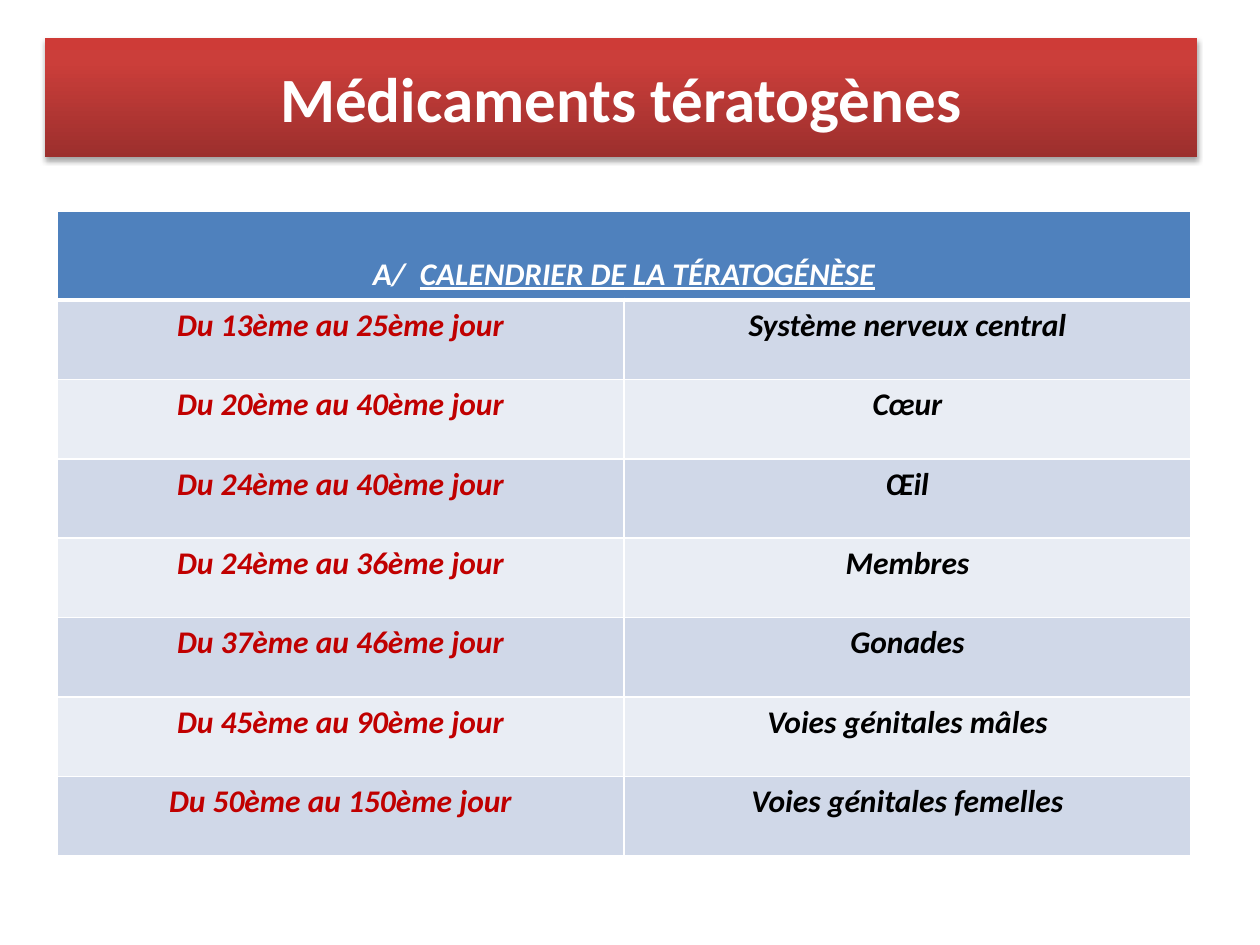
from pptx import Presentation, util as u
from pptx.dml.color import RGBColor
from pptx.enum import text
from pptx.oxml import parse_xml
from pptx.oxml.ns import nsdecls

PX = u.Inches(1) / 126
FONT = "Calibri"
WHITE, BLACK, RED, BLUE = "FFFFFF", "000000", "C00000", "4F81BD"
BANDS = ("D0D8E8", "E9EDF4")
TITLE_STOPS = ((0, "9C2F2D"), (80, "CB3E3A"), (100, "CE3B37"))
CALENDAR = [
    ("Du 13ème au 25ème jour", "Système nerveux central"),
    ("Du 20ème au 40ème jour", "Cœur"),
    ("Du 24ème au 40ème jour", "Œil"),
    ("Du 24ème au 36ème jour", "Membres"),
    ("Du 37ème au 46ème jour", "Gonades"),
    ("Du 45ème au 90ème jour", "Voies génitales mâles"),
    ("Du 50ème au 150ème jour", "Voies génitales femelles"),
]


def px(length):
    return u.Emu(round(length * PX))


def rgb(value):
    return RGBColor.from_string(value)


def add_span(para, words, size, color, italic=False, underline=None):
    span = para.add_run()
    span.text = words
    font = span.font
    font.name, font.size, font.bold = FONT, u.Pt(size), True
    font.italic, font.underline = italic, underline
    font.color.rgb = rgb(color)


def add_gradient_and_shadow(shape):
    """Shade the shape from bottom to top and drop a soft shadow below it."""
    stops = "".join(
        f'<a:gs pos="{place * 1000}"><a:srgbClr val="{color}"/></a:gs>'
        for place, color in TITLE_STOPS)
    properties = shape.element.spPr
    properties.append(parse_xml(
        f'<a:gradFill {nsdecls("a")} rotWithShape="1"><a:gsLst>{stops}</a:gsLst>'
        '<a:lin ang="16200000" scaled="0"/></a:gradFill>'))
    properties.append(parse_xml(
        f'<a:effectLst {nsdecls("a")}><a:outerShdw blurRad="{u.Pt(3.1)}" '
        f'dist="{u.Pt(1.8)}" dir="5400000" rotWithShape="0">'
        '<a:srgbClr val="000000"><a:alpha val="35000"/></a:srgbClr>'
        '</a:outerShdw></a:effectLst>'))


def fill_title(page, words):
    title = page.shapes.title
    title.left, title.top = px(45), px(38)
    title.width, title.height = px(1152), px(119)
    add_gradient_and_shadow(title)
    title.text_frame.vertical_anchor = text.MSO_ANCHOR.MIDDLE
    para = title.text_frame.paragraphs[0]
    para.alignment = text.PP_ALIGN.CENTER
    add_span(para, words, 36, WHITE)


def format_cell(cell, fill, bottom=1):
    """Draw white borders, fill the cell and return its centred paragraph."""
    properties = cell._tc.get_or_add_tcPr()
    for edge, width in (("L", 1), ("R", 1), ("T", 1), ("B", bottom)):
        properties.append(parse_xml(
            f'<a:ln{edge} {nsdecls("a")} w="{u.Pt(width)}"><a:solidFill>'
            f'<a:srgbClr val="{WHITE}"/></a:solidFill></a:ln{edge}>'))
    cell.fill.solid()
    cell.fill.fore_color.rgb = rgb(fill)
    para = cell.text_frame.paragraphs[0]
    para.alignment = text.PP_ALIGN.CENTER
    return para


def add_calendar(page):
    header_height, body_height = px(89), px(556)
    frame = page.shapes.add_table(len(CALENDAR) + 1, 2, px(57), px(211),
                                  px(1134), header_height + body_height)
    table = frame.table
    for row in table.rows:
        row.height = body_height // len(CALENDAR)
    table.rows[0].height = header_height

    header = table.cell(0, 0)
    header.merge(table.cell(0, 1))
    header.vertical_anchor = text.MSO_ANCHOR.BOTTOM
    para = format_cell(header, BLUE, bottom=3)
    add_span(para, "A/  ", 18, WHITE, italic=True)
    add_span(para, "CALENDRIER DE LA TÉRATOGÉNÈSE", 18, WHITE,
             italic=True, underline=True)

    for index, entry in enumerate(CALENDAR):
        for column, (words, color) in enumerate(zip(entry, (RED, BLACK))):
            para = format_cell(table.cell(index + 1, column), BANDS[index % 2])
            add_span(para, words, 18, color, italic=True)


def main():
    deck = Presentation()
    deck.slide_width, deck.slide_height = px(1260), px(945)
    page = deck.slides.add_slide(deck.slide_layouts[5])
    fill_title(page, "Médicaments tératogènes")
    add_calendar(page)
    deck.save("out.pptx")


if __name__ == "__main__":
    main()
